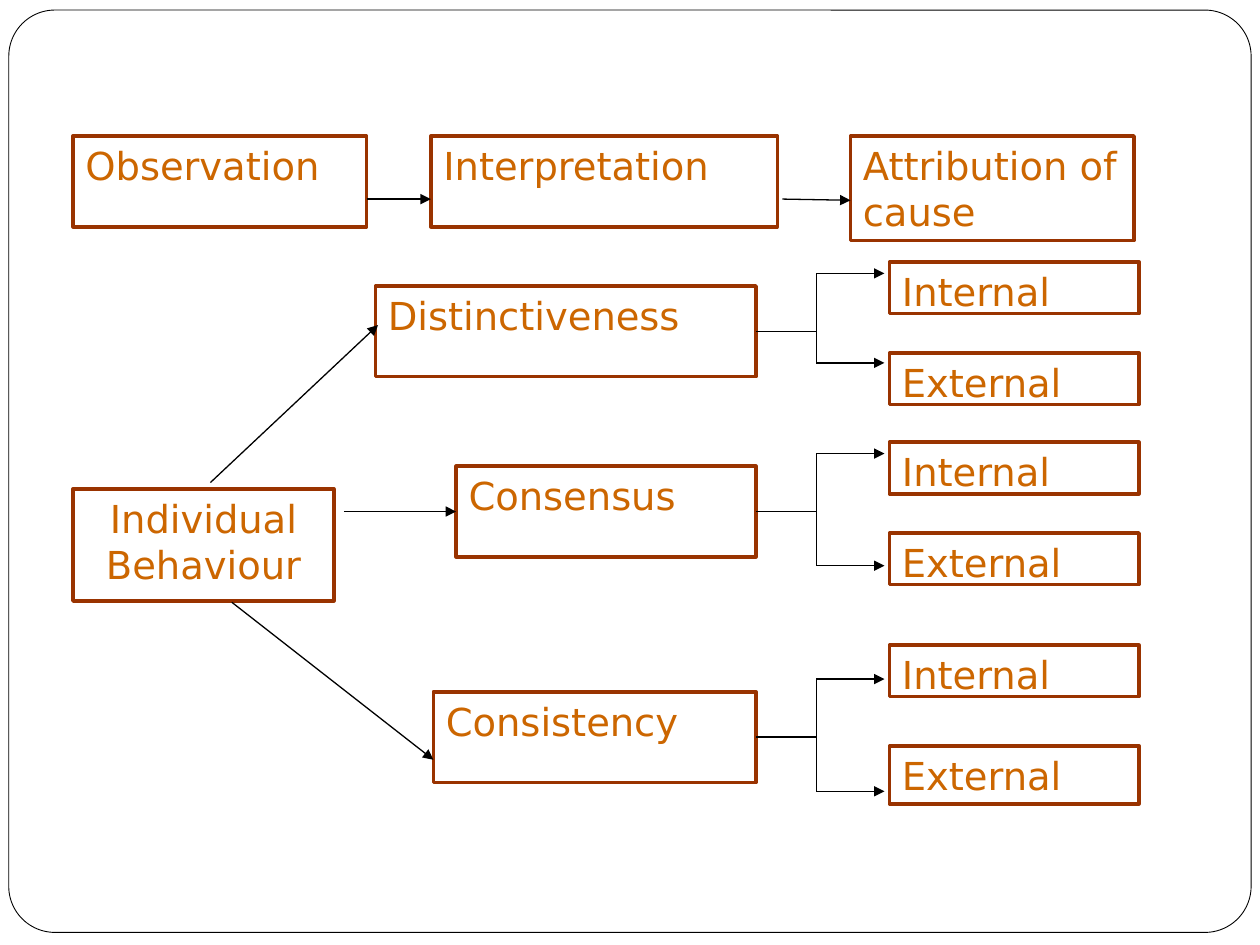
from lxml.etree import SubElement
from pptx import Presentation
from pptx.dml.color import RGBColor
from pptx.enum.shapes import MSO_CONNECTOR, MSO_SHAPE
from pptx.enum.text import MSO_ANCHOR, PP_ALIGN
from pptx.oxml.ns import qn
from pptx.util import Inches, Pt

FONT = "DejaVu Sans"
WHITE, BLACK, BROWN, ORANGE = "FFFFFF", "000000", "993300", "CC6600"
LEFT_SIDE, RIGHT_SIDE = 1, 3

# Text, left, top, width, height
STAGES = [
    ("Observation", 0.58, 1.08, 2.33, 0.72),
    ("Interpretation", 3.42, 1.08, 2.75, 0.72),
    ("Attribution of cause", 6.75, 1.08, 2.25, 0.83),
]
STAGE_ARROWS = [((2.91, 1.58), (3.42, 1.58)), ((6.21, 1.58), (6.75, 1.59))]
BEHAVIOUR = ("Individual Behaviour", 0.58, 3.88, 2.07, 0.89)

FACTOR_RIGHT, FACTOR_HEIGHT = 6, 0.72
FORK_X, FORK_TIP_X = 6.48, 7.02
CAUSE_LEFT, CAUSE_WIDTH = 7.06, 1.98
# Causes: text, top, height, height of the arrow pointing at it
FACTORS = [
    {"text": "Distinctiveness", "left": 2.98, "top": 2.27,
     "arrow": ((1.67, 3.83), (3, 2.58)), "joined": False,
     "causes": [("Internal", 2.08, 0.41, 2.17), ("External", 2.8, 0.41, 2.88)]},
    {"text": "Consensus", "left": 3.62, "top": 3.7,
     "arrow": ((2.73, 4.06), (3.62, 4.06)), "joined": True,
     "causes": [("Internal", 3.51, 0.41, 3.6), ("External", 4.23, 0.41, 4.49)]},
    {"text": "Consistency", "left": 3.44, "top": 5.49,
     "arrow": ((1.84, 4.78), (3.44, 6.03)), "joined": False,
     "causes": [("Internal", 5.12, 0.41, 5.39), ("External", 5.92, 0.46, 6.28)]},
]


def color(value):
    return RGBColor.from_string(value)


def add_panel(slide, kind, left, top, width, height, line_color, line_width):
    shape = slide.shapes.add_shape(
        kind, Inches(left), Inches(top), Inches(width), Inches(height))
    shape.shadow.inherit = False
    shape.fill.solid()
    shape.fill.fore_color.rgb = color(WHITE)
    shape.line.color.rgb = color(line_color)
    shape.line.width = Pt(line_width)
    return shape


def write_text(shape, text, size=22, font_color=ORANGE, align=PP_ALIGN.LEFT):
    frame = shape.text_frame
    frame.word_wrap = True
    frame.vertical_anchor = MSO_ANCHOR.TOP
    paragraph = frame.paragraphs[0]
    paragraph.alignment = align
    run = paragraph.add_run()
    run.text = text
    run.font.name = FONT
    run.font.size = Pt(size)
    run.font.color.rgb = color(font_color)


def add_box(slide, text, left, top, width, height, **text_format):
    shape = add_panel(slide, MSO_SHAPE.RECTANGLE, left, top, width, height, BROWN, 2)
    write_text(shape, text, **text_format)
    return shape


def add_line(slide, start, end, arrow=False):
    line = slide.shapes.add_connector(
        MSO_CONNECTOR.STRAIGHT, *(Inches(value) for value in (*start, *end)))
    line.line.color.rgb = color(BLACK)
    line.line.width = Pt(0.75)
    if arrow:
        SubElement(line.line._get_or_add_ln(), qn("a:tailEnd"), type="triangle")
    SubElement(line._element.spPr, qn("a:effectLst"))
    return line


def add_factor(slide, factor):
    """Draw a factor, the arrow leading to it and the fork to its causes."""
    left, top = factor["left"], factor["top"]
    box = add_box(slide, factor["text"], left, top, FACTOR_RIGHT - left, FACTOR_HEIGHT)
    arrow = add_line(slide, *factor["arrow"], arrow=True)
    if factor["joined"]:
        arrow.end_connect(box, LEFT_SIDE)

    middle = top + FACTOR_HEIGHT / 2
    stem = add_line(slide, (FACTOR_RIGHT, middle), (FORK_X, middle))
    stem.begin_connect(box, RIGHT_SIDE)
    arrow_heights = [cause[3] for cause in factor["causes"]]
    add_line(slide, (FORK_X, arrow_heights[0]), (FORK_X, arrow_heights[-1]))
    for text, cause_top, height, arrow_y in factor["causes"]:
        add_box(slide, text, CAUSE_LEFT, cause_top, CAUSE_WIDTH, height)
        add_line(slide, (FORK_X, arrow_y), (FORK_TIP_X, arrow_y), arrow=True)


def main():
    presentation = Presentation()
    presentation.slide_width = Inches(10)
    presentation.slide_height = Inches(7.5)
    slide = presentation.slides.add_slide(presentation.slide_layouts[6])

    border = add_panel(
        slide, MSO_SHAPE.ROUNDED_RECTANGLE, 0.07, 0.08, 9.86, 7.32, BLACK, 0.5)
    border.adjustments[0] = 0.05

    for stage in STAGES:
        add_box(slide, *stage)
    for start, end in STAGE_ARROWS:
        add_line(slide, start, end, arrow=True)
    add_box(slide, *BEHAVIOUR, align=PP_ALIGN.CENTER)
    for factor in FACTORS:
        add_factor(slide, factor)

    presentation.save("out.pptx")


if __name__ == "__main__":
    main()
